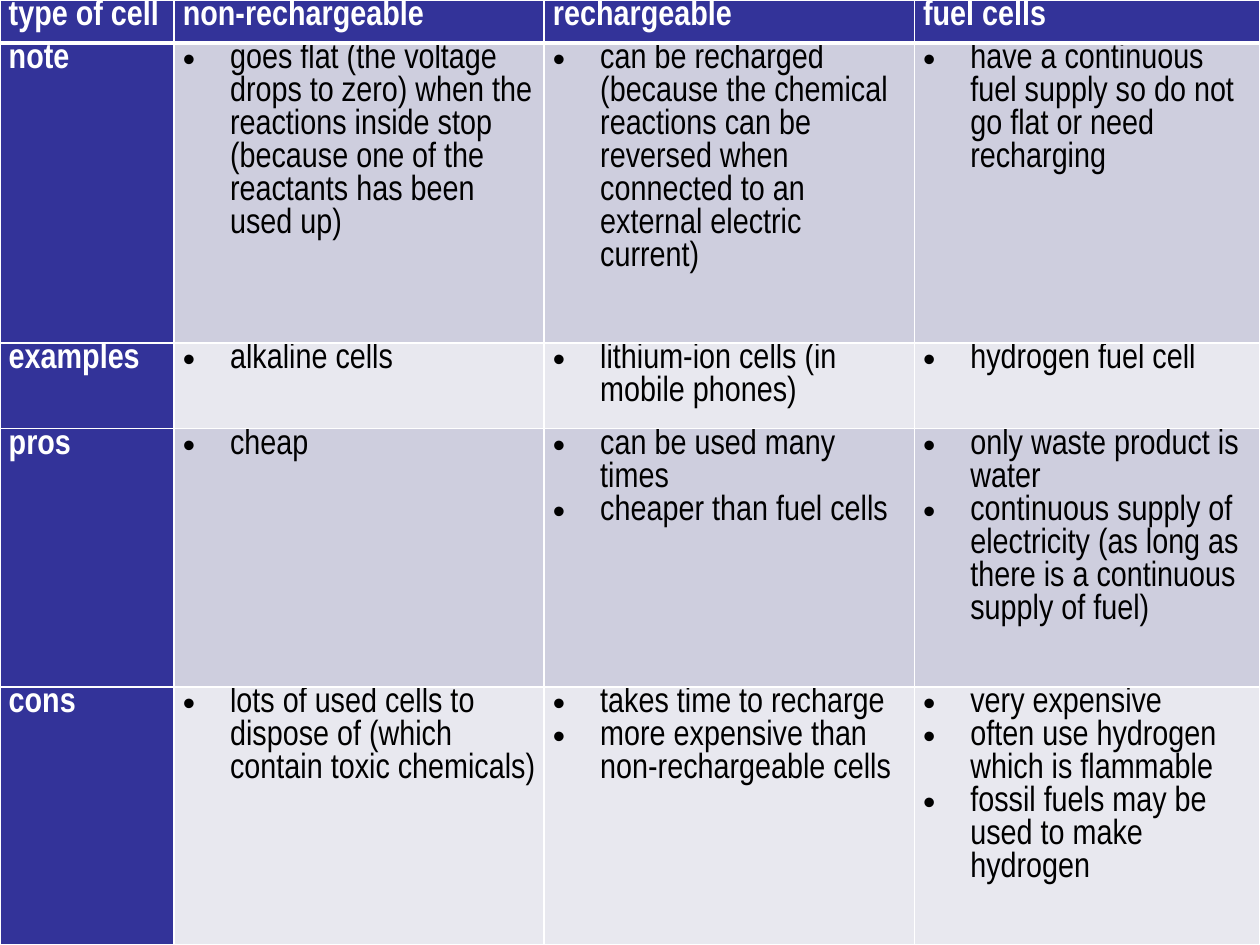
"""Build a slide with a table comparing three types of cell."""
from lxml import etree
from pptx import Presentation
from pptx.dml.color import RGBColor
from pptx.oxml.ns import qn
from pptx.util import Pt

WHITE = RGBColor(0xFF, 0xFF, 0xFF)
BLACK = RGBColor(0x00, 0x00, 0x00)
NAVY = RGBColor(0x33, 0x33, 0x99)
LILAC = RGBColor(0xCE, 0xCE, 0xDE)
PALE = RGBColor(0xE8, 0xE8, 0xEF)
FONT_NAME = "Arial Narrow"
FONT_SIZE = Pt(20)
INDENT = Pt(27)
COLUMN_WIDTHS = [99.5, 211.5, 211.5, 197.5]
ROW_HEIGHTS = [24.5, 171.5, 49, 147.5, 147.5]
ROWS = [
    [["type of cell"], ["non-rechargeable"], ["rechargeable"], ["fuel cells"]],
    [
        ["note"],
        ["goes flat (the voltage drops to zero) when the reactions inside stop "
         "(because one of the reactants has been used up)"],
        ["can be recharged (because the chemical reactions can be reversed when "
         "connected to an external electric current)"],
        ["have a continuous fuel supply so do not go flat or need recharging"],
    ],
    [
        ["examples"],
        ["alkaline cells"],
        ["lithium-ion cells (in mobile phones)"],
        ["hydrogen fuel cell"],
    ],
    [
        ["pros"],
        ["cheap"],
        ["can be used many times", "cheaper than fuel cells"],
        ["only waste product is water",
         "continuous supply of electricity (as long as there is a continuous "
         "supply of fuel)"],
    ],
    [
        ["cons"],
        ["lots of used cells to dispose of (which contain toxic chemicals)"],
        ["takes time to recharge", "more expensive than non-rechargeable cells"],
        ["very expensive", "often use hydrogen which is flammable",
         "fossil fuels may be used to make hydrogen"],
    ],
]


def add_bullet(paragraph):
    properties = paragraph._p.get_or_add_pPr()
    properties.set("marL", str(INDENT))
    properties.set("indent", str(-INDENT))
    etree.SubElement(properties, qn("a:buFont"), typeface="Arial")
    etree.SubElement(properties, qn("a:buChar"), char="•")


def set_borders(cell, widths):
    properties = cell._tc.get_or_add_tcPr()
    for position, (side, width) in enumerate(widths.items()):
        line = etree.Element(qn(f"a:ln{side}"), w=str(Pt(width)))
        fill = etree.SubElement(line, qn("a:solidFill"))
        etree.SubElement(fill, qn("a:srgbClr"), val=str(WHITE))
        properties.insert(position, line)


presentation = Presentation()
presentation.slide_width = Pt(720)
presentation.slide_height = Pt(540)
slide = presentation.slides.add_slide(presentation.slide_layouts[6])

table = slide.shapes.add_table(
    len(ROWS), len(COLUMN_WIDTHS), Pt(0), Pt(0), Pt(720), Pt(540)
).table
for column, width in zip(table.columns, COLUMN_WIDTHS):
    column.width = Pt(width)
for row, height in zip(table.rows, ROW_HEIGHTS):
    row.height = Pt(height)

for row_index, row_texts in enumerate(ROWS):
    for column_index, lines in enumerate(row_texts):
        cell = table.cell(row_index, column_index)
        is_heading = row_index == 0 or column_index == 0
        body_fill = LILAC if row_index % 2 else PALE
        cell.fill.solid()
        cell.fill.fore_color.rgb = NAVY if is_heading else body_fill
        cell.margin_left = cell.margin_right = Pt(5)
        cell.margin_top = cell.margin_bottom = Pt(0)
        set_borders(cell, {
            "L": 1,
            "R": 1,
            "T": 3 if row_index == 1 else 1,
            "B": 3 if row_index == 0 else 1,
        })
        cell.text_frame.text = "\n".join(lines)
        for paragraph in cell.text_frame.paragraphs:
            if not is_heading:
                add_bullet(paragraph)
            paragraph.font.name = FONT_NAME
            paragraph.font.size = FONT_SIZE
            paragraph.font.bold = is_heading
            paragraph.font.color.rgb = WHITE if is_heading else BLACK

presentation.save("out.pptx")
